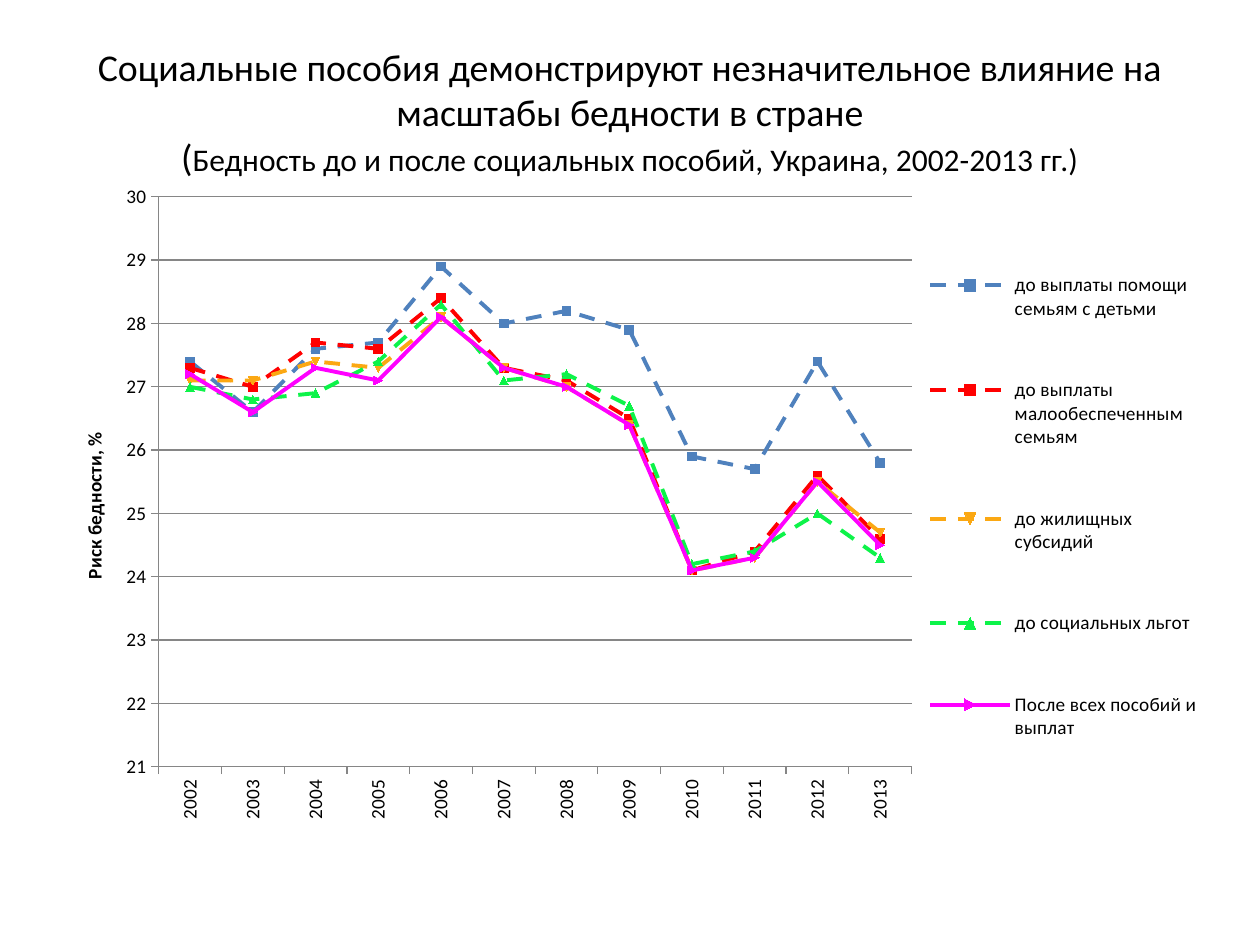
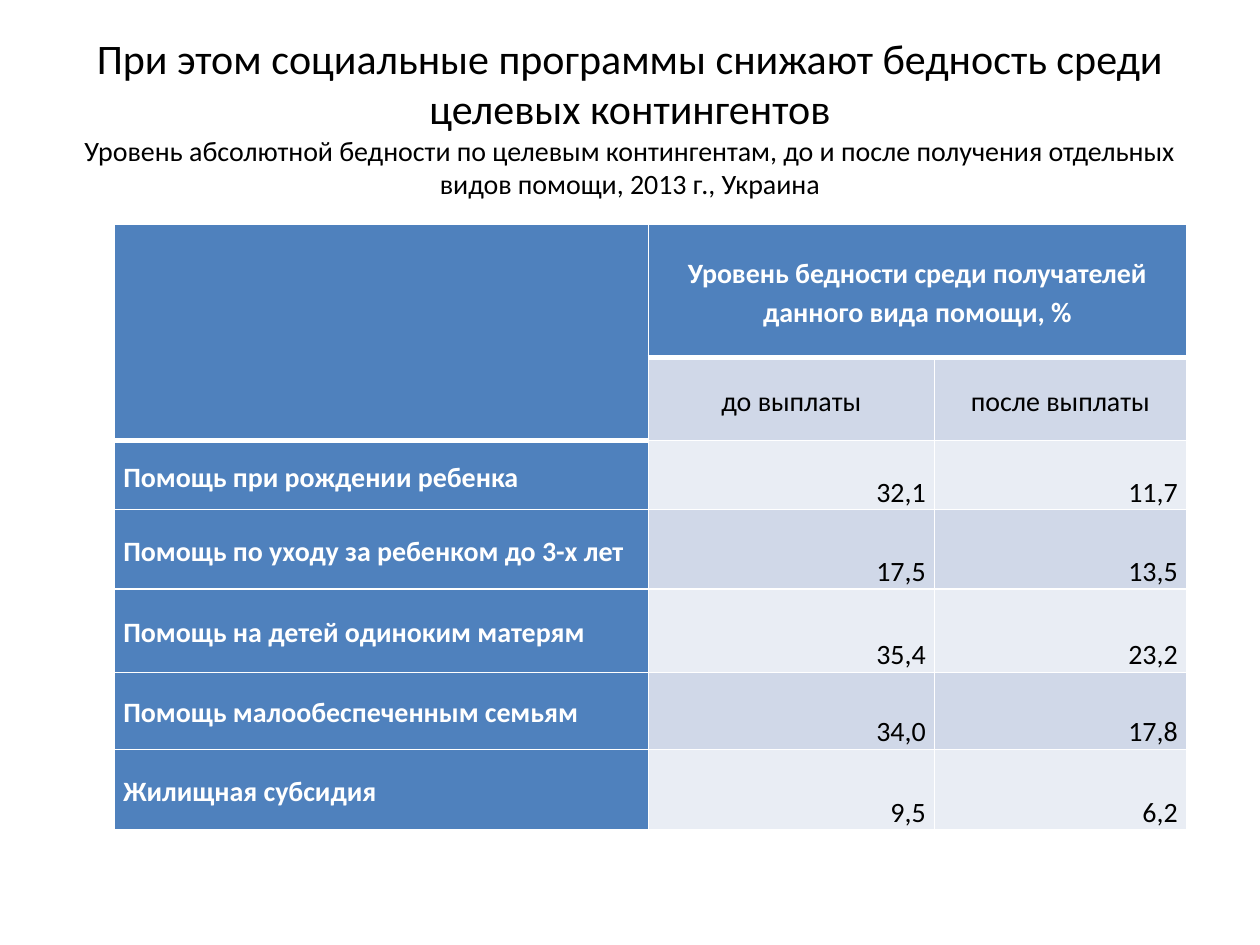
from lxml import etree
from pptx import Presentation
from pptx.chart import data
from pptx.dml import color
from pptx.enum import chart as ch, dml, text
from pptx.oxml import ns
from pptx.util import Pt

FONT = "Calibri"
BLACK, WHITE, BLUE, GREY = "000000", "FFFFFF", "4F81BD", "868686"
BANDS = ["E9EDF4", "D0D8E8"]
MID, LOW = text.MSO_ANCHOR.MIDDLE, text.MSO_ANCHOR.BOTTOM
LEFT, CENTER, RIGHT = text.PP_ALIGN.LEFT, text.PP_ALIGN.CENTER, text.PP_ALIGN.RIGHT


def rgb(code):
    return color.RGBColor.from_string(code)


def style(font, size, code=BLACK, bold=False):
    font.name, font.size, font.bold = FONT, Pt(size), bold
    font.color.rgb = rgb(code)


def place(node, index, spots):
    for old in node.findall(ns.qn("c:layout")):
        node.remove(old)
    layout = etree.Element(ns.qn("c:layout"))
    manual = etree.SubElement(layout, ns.qn("c:manualLayout"))
    for tag, val in spots.items():
        etree.SubElement(manual, ns.qn("c:" + tag)).set("val", str(val))
    node.insert(index, layout)


def edge(cell, side, width):
    props = cell._tc.get_or_add_tcPr()
    line = etree.Element(ns.qn("a:ln" + side), w=str(Pt(width)))
    fill = etree.SubElement(line, ns.qn("a:solidFill"))
    etree.SubElement(fill, ns.qn("a:srgbClr"), val=WHITE)
    props.insert("LRTB".index(side), line)


class Deck:
    """Holds the shared style and the current slide."""

    def __init__(self):
        self.prs = Presentation()
        self.prs.slide_width, self.prs.slide_height = Pt(720), Pt(540)
        self.slide = None

    def title(self, height, *parts):
        self.slide = self.prs.slides.add_slide(self.prs.slide_layouts[5])
        box = self.slide.shapes.title
        box.left, box.top, box.width, box.height = Pt(36), Pt(21.6), Pt(648), Pt(height)
        frame = box.text_frame
        frame.auto_size = text.MSO_AUTO_SIZE.NONE
        frame.vertical_anchor = MID
        para = frame.paragraphs[0]
        para.alignment = CENTER
        for words, size in parts:
            for i, piece in enumerate(words.split("\n")):
                if i:
                    para.add_line_break()
                if piece:
                    run = para.add_run()
                    run.text = piece
                    style(run.font, size)

    def chart(self, at, cats, rows, label):
        source = data.CategoryChartData(number_format="General")
        source.categories = cats
        for name, _, _, vals in rows:
            source.add_series(name, vals)
        frame = self.slide.shapes.add_chart(
            ch.XL_CHART_TYPE.LINE_MARKERS, *map(Pt, at), source)
        chart = frame.chart
        chart.has_title = False
        style(chart.font, 11)
        for line, (_, code, mark, _) in zip(chart.plots[0].series, rows):
            line.smooth = False
            pen = line.format.line
            pen.color.rgb, pen.width = rgb(code), Pt(2.25)
            if line is not None and code != rows[-1][1]:
                pen.dash_style = dml.MSO_LINE.DASH
            line.marker.style, line.marker.size = mark, 5
            line.marker.format.fill.solid()
            line.marker.format.fill.fore_color.rgb = rgb(code)
            line.marker.format.line.color.rgb = rgb(code)
        self.axes(chart, label)
        chart.has_legend = True
        key = chart.legend
        key.position, key.include_in_layout = ch.XL_LEGEND_POSITION.RIGHT, False
        style(key.font, 11)
        place(key._element, 1, dict(xMode="edge", yMode="edge", x=0.75, y=0.06, w=0.24, h=0.85))
        area = chart._chartSpace.chart.plotArea
        place(area, 0, dict(layoutTarget="inner", xMode="edge", yMode="edge",
                            x=0.09, y=0.032, w=0.649, h=0.833))

    def axes(self, chart, label):
        cat, val = chart.category_axis, chart.value_axis
        for axis in (cat, val):
            axis.major_tick_mark = ch.XL_TICK_MARK.OUTSIDE
            axis.minor_tick_mark = ch.XL_TICK_MARK.NONE
            axis.format.line.color.rgb = rgb(GREY)
            style(axis.tick_labels.font, 11)
        cat.has_major_gridlines = False
        cat._element.txPr.bodyPr.set("rot", "-5400000")
        val.minimum_scale, val.maximum_scale, val.major_unit = 21, 30, 1
        val.has_major_gridlines = True
        grid = val.major_gridlines.format.line
        grid.color.rgb, grid.width = rgb(GREY), Pt(0.75)
        head = val.axis_title
        head.text_frame.text = label
        style(head.text_frame.paragraphs[0].font, 11, bold=True)
        head.text_frame._txBody.bodyPr.set("rot", "-5400000")
        place(head._element, 1, dict(xMode="edge", yMode="edge", x=0.02, y=0.37))

    def cell(self, cell, words, fill, align, anchor, base=1):
        head = fill == BLUE
        cell.fill.solid()
        cell.fill.fore_color.rgb = rgb(fill)
        cell.margin_left = cell.margin_right = Pt(5)
        cell.margin_top = cell.margin_bottom = 0
        cell.vertical_anchor = anchor
        cell.text = words
        para = cell.text_frame.paragraphs[0]
        para.alignment, para.line_spacing = align, 1.15
        style(para.font, 16, WHITE if head else BLACK, head)
        for side in "LRTB":
            edge(cell, side, base if side == "B" else 1)

    def table(self, at, wides, highs, rows):
        table = self.slide.shapes.add_table(
            len(highs), len(wides), *map(Pt, at), Pt(sum(wides)), Pt(sum(highs))).table
        for col, wide in zip(table.columns, wides):
            col.width = Pt(wide)
        for row, high in zip(table.rows, highs):
            row.height = Pt(high)
        for r, row in enumerate(rows):
            for c, words in enumerate(row):
                head = r == 0 or c == 0
                fill = BLUE if head else BANDS[r % 2]
                align = CENTER if r < 2 else RIGHT if c else LEFT
                anchor = MID if r < 2 or c == 0 else LOW
                thick = r == 0 or (r == 1 and c == 0)
                self.cell(table.cell(r, c), words, fill, align, anchor, 3 if thick else 1)
        table.cell(0, 0).merge(table.cell(1, 0))
        table.cell(0, 1).merge(table.cell(0, 2))


def main():
    deck = Deck()
    deck.title(
        84.2,
        ("Социальные пособия демонстрируют незначительное влияние на масштабы бедности в стране\n(", 21.6),
        ("Бедность до и после социальных пособий, Украина, 2002-2013 гг.)", 18))
    mark = ch.XL_MARKER_STYLE
    auto = mark.AUTOMATIC
    deck.chart(
        (31, 100, 663, 391), [str(year) for year in range(2002, 2014)],
        [("до выплаты помощи семьям с детьми", BLUE, auto,
          (27.4, 26.6, 27.6, 27.7, 28.9, 28, 28.2, 27.9, 25.9, 25.7, 27.4, 25.8)),
         ("до выплаты малообеспеченным семьям", "FF0000", mark.SQUARE,
          (27.3, 27, 27.7, 27.6, 28.4, 27.3, 27.1, 26.5, 24.1, 24.4, 25.6, 24.6)),
         ("до жилищных субсидий", "FBA813", auto,
          (27.1, 27.1, 27.4, 27.3, 28.1, 27.3, 27, 26.4, 24.1, 24.3, 25.5, 24.7)),
         ("до социальных льгот", "0DF349", auto,
          (27, 26.8, 26.9, 27.4, 28.3, 27.1, 27.2, 26.7, 24.2, 24.4, 25, 24.3)),
         ("После всех пособий и выплат", "FF00FF", auto,
          (27.2, 26.6, 27.3, 27.1, 28.1, 27.3, 27, 26.4, 24.1, 24.3, 25.5, 24.5))],
        "Риск бедности, %")

    deck.title(
        90,
        ("При этом социальные программы снижают бедность среди целевых контингентов\n", 24),
        ("Уровень абсолютной бедности по целевым контингентам, до и после получения "
         "отдельных видов помощи, 2013 г., Украина", 16))
    deck.table(
        (65.5, 128.2), (305, 163.5, 144), (76, 47.5, 39.6, 45.4, 47.5, 44, 46),
        [("", "Уровень бедности среди получателей данного вида помощи, %", ""),
         ("", "до выплаты", "после выплаты"),
         ("Помощь при рождении ребенка", "32,1", "11,7"),
         ("Помощь по уходу за ребенком до 3-х лет", "17,5", "13,5"),
         ("Помощь на детей одиноким матерям", "35,4", "23,2"),
         ("Помощь малообеспеченным семьям", "34,0", "17,8"),
         ("Жилищная субсидия", "9,5", "6,2")])
    deck.prs.save("out.pptx")


if __name__ == "__main__":
    main()
